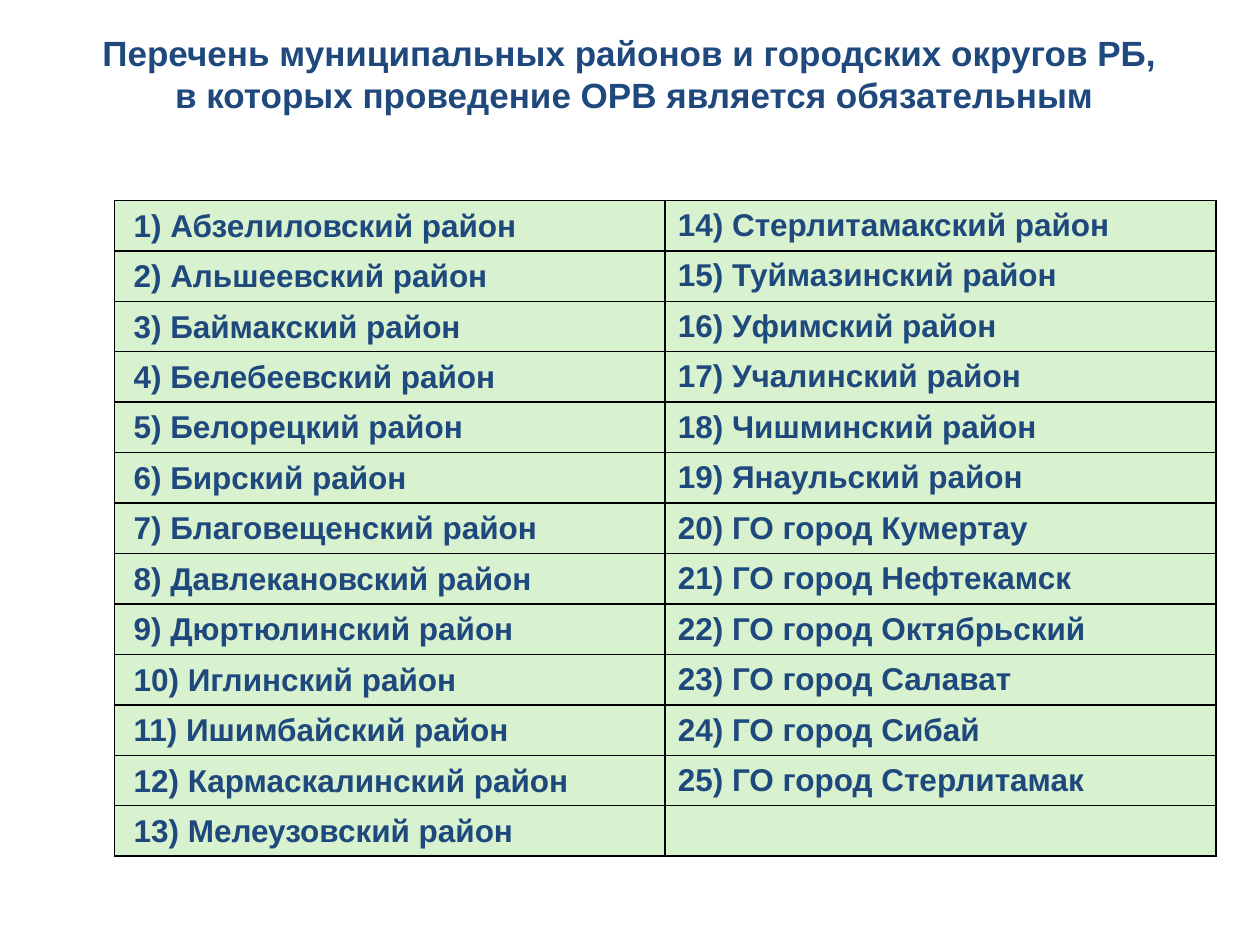
from itertools import product

from lxml.etree import SubElement
from pptx import Presentation
from pptx.dml.color import RGBColor as RGB
from pptx.enum.text import MSO_ANCHOR as Anchor, MSO_AUTO_SIZE as Fit, PP_ALIGN as Align
from pptx.oxml.ns import qn
from pptx.util import Inches, Pt

TITLE = [
    "Перечень муниципальных районов и городских округов РБ, ",
    "в которых проведение ОРВ является обязательным",
]
RAIONS = [
    "Абзелиловский", "Альшеевский", "Баймакский", "Белебеевский",
    "Белорецкий", "Бирский", "Благовещенский", "Давлекановский",
    "Дюртюлинский", "Иглинский", "Ишимбайский", "Кармаскалинский",
    "Мелеузовский", "Стерлитамакский", "Туймазинский", "Уфимский",
    "Учалинский", "Чишминский", "Янаульский",
]
CITIES = ["Кумертау", "Нефтекамск", "Октябрьский", "Салават", "Сибай", "Стерлитамак"]

THEME = {
    "font": "Arial", "ink": "1F497D", "fill": "D8F1CF", "line": "000000",
    "title": 20, "body": 18, "border": 1,
}
WIDTH, HEIGHT = 10, 7.5
ROWS, COLS = 13, 2
ROW, COL = 0.4, 4.37
# left, top, right, bottom margins of the cells in each column
PADS = [(0.15, 0.01, 0.01, 0), (0.1, 0.05, 0.1, 0.05)]


def write(para, text, size):
    run = para.add_run()
    run.text = text
    font = run.font
    font.name, font.size, font.bold = THEME["font"], Pt(size), True
    font.color.rgb = RGB.from_string(THEME["ink"])


def frame(cell):
    """Draw a solid border on all four sides; must precede the cell's fill."""
    props = cell._tc.get_or_add_tcPr()
    for side in ("a:lnL", "a:lnR", "a:lnT", "a:lnB"):
        line = SubElement(props, qn(side), w=str(Pt(THEME["border"])))
        solid = SubElement(line, qn("a:solidFill"))
        SubElement(solid, qn("a:srgbClr"), val=THEME["line"])


def add_title(slide):
    box = slide.shapes.add_textbox(Inches(0.68), Inches(0.2), Inches(8.71), Inches(0.77))
    text = box.text_frame
    text.word_wrap = False
    text.auto_size = Fit.SHAPE_TO_FIT_TEXT
    for i, line in enumerate(TITLE):
        para = text.add_paragraph() if i else text.paragraphs[0]
        para.alignment = Align.CENTER
        write(para, line, THEME["title"])


def add_list(slide):
    names = [f"{name} район" for name in RAIONS] + [f"ГО город {name}" for name in CITIES]
    table = slide.shapes.add_table(
        ROWS, COLS, Inches(0.91), Inches(1.59), Inches(COLS * COL), Inches(ROWS * ROW)
    ).table
    table.first_row = table.horz_banding = False
    for row in table.rows:
        row.height = Inches(ROW)
    for c, r in product(range(COLS), range(ROWS)):
        cell = table.cell(r, c)
        frame(cell)
        cell.fill.solid()
        cell.fill.fore_color.rgb = RGB.from_string(THEME["fill"])
        cell.vertical_anchor = Anchor.MIDDLE
        (cell.margin_left, cell.margin_top,
         cell.margin_right, cell.margin_bottom) = map(Inches, PADS[c])
        i = c * ROWS + r
        if i < len(names):
            write(cell.text_frame.paragraphs[0], f"{i + 1}) {names[i]}", THEME["body"])


def main():
    deck = Presentation()
    deck.slide_width, deck.slide_height = Inches(WIDTH), Inches(HEIGHT)
    slide = deck.slides.add_slide(deck.slide_layouts[6])
    add_title(slide)
    add_list(slide)
    deck.save("out.pptx")


if __name__ == "__main__":
    main()
